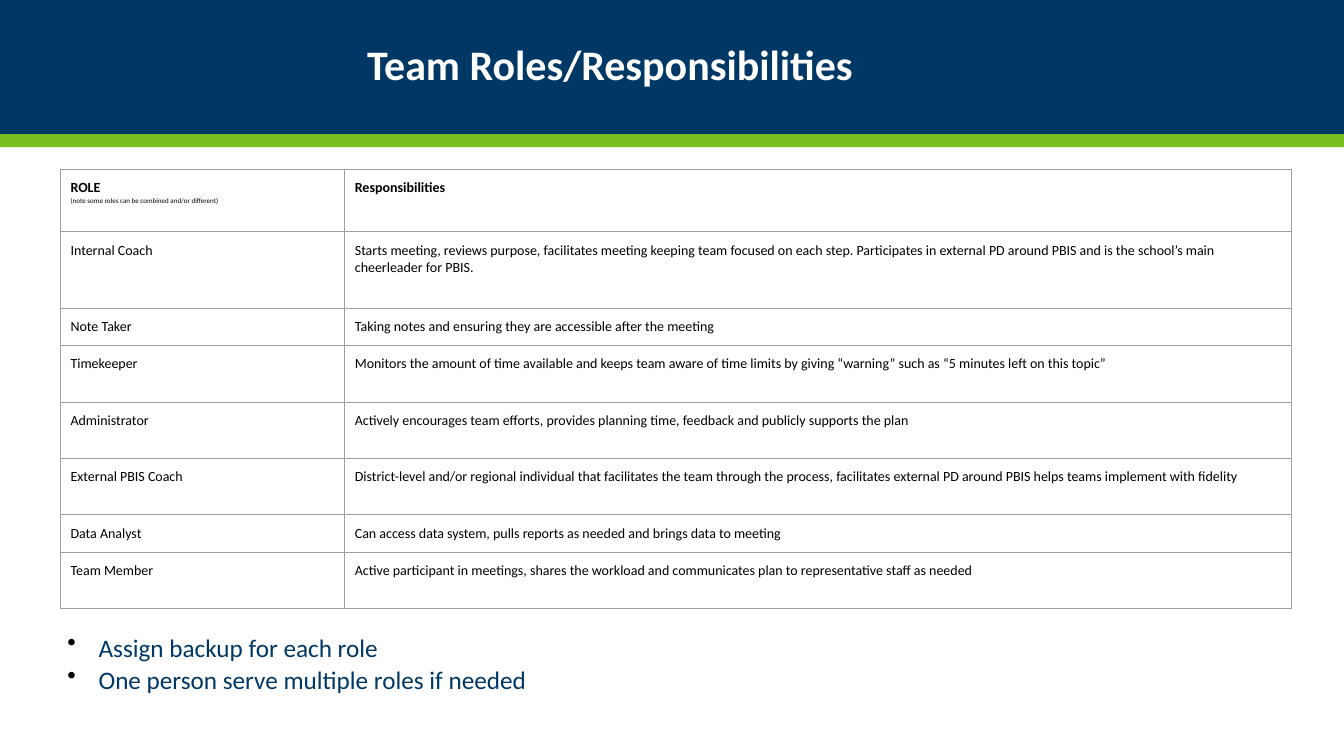
import pptx
import pptx.util
import pptx.dml.color
import pptx.enum.shapes
import pptx.enum.text
from lxml import etree

PX = 9144  # EMU per px, 100 px to the inch
NAVY, GREEN, WHITE, BLACK, GREY = "003865", "78BE21", "FFFFFF", "000000", "9E9E9E"


def color(value):
    return pptx.dml.color.RGBColor.from_string(value)


def write(para, text, size=10, fill=BLACK, bold=False):
    span = para.add_run()
    span.text = text
    span.font.name = "Calibri"
    span.font.size = pptx.util.Pt(size)
    span.font.bold = bold
    span.font.color.rgb = color(fill)


deck = pptx.Presentation()
deck.slide_width, deck.slide_height = 1333 * PX, 750 * PX
page = deck.slides.add_slide(deck.slide_layouts[5])

# Header bands, kept behind the title
for order, (top, height, fill) in enumerate([(0, 133, NAVY), (133, 13, GREEN)]):
    band = page.shapes.add_shape(
        pptx.enum.shapes.MSO_SHAPE.RECTANGLE, 0, top * PX, 1333 * PX, height * PX)
    band.shadow.inherit = False
    band.fill.solid()
    band.fill.fore_color.rgb = color(fill)
    band.line.fill.background()
    page.shapes._spTree.insert(2 + order, band._element)

title = page.shapes.title
title.left, title.top, title.width, title.height = 354 * PX, 16 * PX, 775 * PX, 100 * PX
title.text_frame.vertical_anchor = pptx.enum.text.MSO_ANCHOR.MIDDLE
para = title.text_frame.paragraphs[0]
para.alignment = pptx.enum.text.PP_ALIGN.LEFT
para.line_spacing = 0.9
write(para, "Team Roles/Responsibilities", size=30, fill=WHITE, bold=True)

# Bulleted reminders below the table
box = page.shapes.add_textbox(50 * PX, 633 * PX, 1204 * PX, 62 * PX)
box.text_frame.word_wrap = True
reminders = ["Assign backup for each role", "One person serve multiple roles if needed"]
for index, reminder in enumerate(reminders):
    para = box.text_frame.add_paragraph() if index else box.text_frame.paragraphs[0]
    para.line_spacing = 0.6
    para.space_before = pptx.util.Pt(10 if index else 0)
    props = para._p.get_or_add_pPr()
    props.set("marL", str(38 * PX))
    props.set("indent", str(-31 * PX))
    bullet_color = etree.SubElement(props, pptx.oxml.ns.qn("a:buClr"))
    etree.SubElement(bullet_color, pptx.oxml.ns.qn("a:srgbClr"), val=BLACK)
    etree.SubElement(props, pptx.oxml.ns.qn("a:buChar"), char="•")
    write(para, reminder, size=18, fill=NAVY)

# Row height, role, responsibility
roles = [
    (62, "ROLE", "Responsibilities"),
    (76, "Internal Coach",
     "Starts meeting, reviews purpose, facilitates meeting keeping team focused on each step. "
     "Participates in external PD around PBIS and is the school’s main cheerleader for PBIS."),
    (37, "Note Taker", "Taking notes and ensuring they are accessible after the meeting"),
    (56, "Timekeeper",
     "Monitors the amount of time available and keeps team aware of time limits by giving "
     "“warning” such as “5 minutes left on this topic”"),
    (56, "Administrator",
     "Actively encourages team efforts, provides planning time, feedback and publicly "
     "supports the plan"),
    (56, "External PBIS Coach",
     "District-level and/or regional individual that facilitates the team through the process, "
     "facilitates external PD around PBIS helps teams implement with fidelity"),
    (37, "Data Analyst",
     "Can access data system, pulls reports as needed and brings data to meeting"),
    (56, "Team Member",
     "Active participant in meetings, shares the workload and communicates plan to "
     "representative staff as needed"),
]
table = page.shapes.add_table(
    len(roles), 2, 60 * PX, 168 * PX, 1221 * PX, 436 * PX).table
table.first_row = table.horz_banding = False
for column, width in zip(table.columns, (282, 939)):
    column.width = width * PX

for row, (height, *texts) in enumerate(roles):
    table.rows[row].height = height * PX
    for column, text in enumerate(texts):
        cell = table.cell(row, column)
        cell.margin_left = cell.margin_right = cell.margin_top = cell.margin_bottom = 10 * PX
        write(cell.text_frame.paragraphs[0], text, bold=row == 0)
        props = cell._tc.get_or_add_tcPr()
        for side in ("lnL", "lnR", "lnT", "lnB"):
            border = etree.SubElement(
                props, pptx.oxml.ns.qn(f"a:{side}"), w=str(pptx.util.Pt(0.75)))
            paint = etree.SubElement(border, pptx.oxml.ns.qn("a:solidFill"))
            etree.SubElement(paint, pptx.oxml.ns.qn("a:srgbClr"), val=GREY)
        cell.fill.background()

write(table.cell(0, 0).text_frame.add_paragraph(),
      "(note some roles can be combined and/or different)", size=5)

deck.save("out.pptx")
